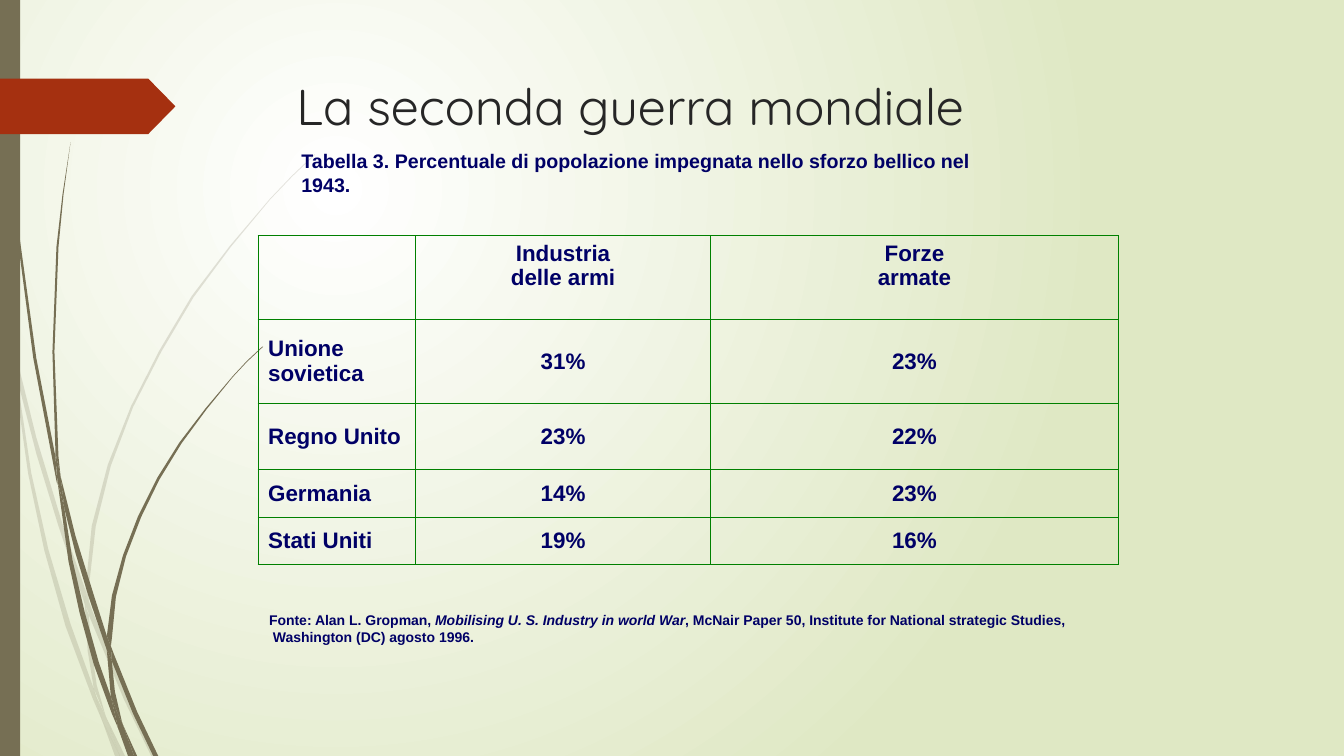
from lxml.etree import SubElement
from pptx import Presentation
from pptx.dml.color import RGBColor
from pptx.enum.shapes import MSO_SHAPE
from pptx.enum.text import MSO_ANCHOR, MSO_AUTO_SIZE, PP_ALIGN
from pptx.oxml import parse_xml
from pptx.oxml.ns import nsdecls, qn
from pptx.util import Inches, Pt

WIDTH, HEIGHT = Inches(13.33), Inches(7.5)
COLUMNS, ROWS = 13.33, 7.5
OLIVE, RUST, NAVY, GREEN, INK = "766F54", "A53010", "000066", "008000", "262626"

PALE_STALKS = [
    [(0.11, 3.5), (0.09, 3.22), (0, 2.82), (0, 2.99), (0.1, 3.44)],
    [(0.58, 5.22), (0.84, 5.99), (0.85, 5.86), (0.62, 5.2), (0.36, 4.34), (0.14, 3.45),
     (0.17, 3.76), (0.36, 4.5)],
    [(0.92, 6.07), (0.88, 5.96), (0.88, 6.1), (1.23, 6.94), (1.5, 7.5), (1.55, 7.5), (1.27, 6.92)],
    [(1.19, 7.5), (1.24, 7.5), (1.05, 7.11)],
    [(0.93, 6.83), (0.7, 6.19), (0.48, 5.45), (0.31, 4.69), (0.17, 3.76), (0.11, 3.5), (0.28, 4.7),
     (0.44, 5.46), (0.65, 6.21), (0.92, 6.93), (1.01, 7.14), (0.99, 7.07)],
    [(0.84, 5.99), (0.87, 6.46), (0.93, 6.83), (1.05, 7.11), (0.96, 6.8), (0.91, 6.46), (0.88, 6.1)],
    [(0.88, 5.84), (0.95, 5.22), (1.1, 4.62), (1.32, 4.04), (1.6, 3.49), (1.92, 2.95), (2.29, 2.45),
     (2.68, 1.98), (2.9, 1.75), (3.12, 1.54), (3.12, 1.53), (2.89, 1.75), (2.68, 1.97),
     (2.28, 2.44), (1.9, 2.94), (1.58, 3.48), (1.3, 4.03), (1.07, 4.61), (0.91, 5.22),
     (0.85, 5.84), (0.88, 5.96)],
    [(1.01, 7.14), (1.14, 7.5), (1.19, 7.5)],
    [(0.88, 6.08), (0.88, 5.96), (0.85, 5.86), (0.84, 5.99)],
    [(0.96, 6.92), (0.93, 6.83), (0.99, 7.07), (1.01, 7.14), (1.19, 7.5), (1.05, 7.11)],
]
DARK_STALKS = [
    [(0.07, 1.1), (0.17, 2.33), (0.33, 3.55), (0.56, 4.77), (0.57, 4.81), (0.55, 4.53),
     (0.36, 3.55), (0.19, 2.32), (0.08, 1.09), (0.05, 0.48), (0.04, 0), (0.03, 0), (0.04, 0.48)],
    [(0.88, 5.92), (1.06, 6.45), (1.06, 6.31), (0.93, 5.9), (0.75, 5.32), (0.6, 4.72),
     (0.64, 5.05), (0.75, 5.49)],
    [(1.13, 6.49), (1.1, 6.41), (1.11, 6.56), (1.32, 7.08), (1.52, 7.5), (1.57, 7.5), (1.36, 7.06)],
    [(1.1, 6.91), (0.98, 6.57), (0.84, 6.07), (0.72, 5.56), (0.64, 5.05), (0.57, 4.77),
     (0.68, 5.57), (0.79, 6.08), (0.93, 6.59), (1.11, 7.08), (1.17, 7.22), (1.16, 7.17)],
    [(0.6, 4.72), (0.58, 4.53), (0.54, 3.49), (0.58, 2.45), (0.63, 1.93), (0.7, 1.41),
     (0.62, 1.93), (0.56, 2.45), (0.52, 3.49), (0.55, 4.49)],
    [(1.33, 7.5), (1.36, 7.5), (1.22, 7.19)],
    [(0.57, 4.77), (0.64, 5.05), (0.6, 4.72), (0.55, 4.49), (0.55, 4.53)],
    [(1.11, 6.33), (1.15, 5.92), (1.25, 5.52), (1.4, 5.13), (1.58, 4.76), (1.8, 4.4), (2.05, 4.06),
     (2.31, 3.74), (2.45, 3.59), (2.61, 3.44), (2.6, 3.44), (2.45, 3.58), (2.31, 3.73),
     (2.04, 4.05), (1.78, 4.39), (1.56, 4.74), (1.37, 5.12), (1.22, 5.51), (1.11, 5.91),
     (1.06, 6.31), (1.1, 6.41)],
    [(1.17, 7.22), (1.27, 7.5), (1.31, 7.5)],
    [(1.06, 6.45), (1.1, 6.91), (1.16, 7.06), (1.22, 7.19), (1.21, 7.16), (1.14, 6.86),
     (1.11, 6.56), (1.09, 6.51)],
    [(1.06, 6.45), (1.09, 6.51), (1.11, 6.56), (1.1, 6.41), (1.06, 6.31)],
    [(1.16, 7.06), (1.1, 6.91), (1.16, 7.17), (1.17, 7.22), (1.3, 7.5), (1.33, 7.5), (1.22, 7.19)],
]
POPULATION = [
    ["", "Industria\vdelle armi", "Forze\varmate"],
    ["Unione sovietica", "31%", "23%"],
    ["Regno Unito", "23%", "22%"],
    ["Germania", "14%", "23%"],
    ["Stati Uniti", "19%", "16%"],
]
SOURCE = [
    [("Fonte: Alan L. Gropman, ", False), ("Mobilising U. S. Industry in world War", True),
     (", McNair Paper 50, Institute for National strategic Studies,", False)],
    [(" Washington (DC) agosto 1996.", False)],
]


def across(columns):
    """Turn grid columns into a length."""
    return round(WIDTH * columns / COLUMNS)


def down(rows):
    """Turn grid rows into a length."""
    return round(HEIGHT * rows / ROWS)


def place(left, top, width, height):
    """Turn a grid area into lengths."""
    return across(left), down(top), across(width), down(height)


def color(code):
    """Turn a hex string into a colour."""
    return RGBColor.from_string(code)


def apply(target, formats):
    """Set every attribute in a dict of format values."""
    for attribute, value in formats.items():
        setattr(target, attribute, value)


def style_font(font, size, code, **formats):
    """Give a font its size, colour and further formats."""
    apply(font, {"size": Pt(size), "name": "Arial", **formats})
    font.color.rgb = color(code)


def paint(shape, code, opacity=100):
    """Give a shape a plain fill without line or shadow."""
    shape.shadow.inherit = False
    shape.fill.solid()
    shape.fill.fore_color.rgb = color(code)
    shape.line.fill.background()
    if opacity < 100:
        tint = next(shape.element.spPr.iter(qn("a:srgbClr")))
        SubElement(tint, qn("a:alpha"), val=str(opacity * 1000))


def add_stalk(slide, corners, opacity):
    """Draw one piece of a grass stalk."""
    outline = [(across(x), down(y)) for x, y in corners]
    builder = slide.shapes.build_freeform(*outline[0])
    builder.add_line_segments(outline[1:], close=True)
    paint(builder.convert_to_shape(), OLIVE, opacity)


def add_block(slide, kind, area, code):
    """Draw a preset shape in one colour."""
    block = slide.shapes.add_shape(kind, *place(*area))
    paint(block, code)
    return block


def set_background(slide):
    """Spread a round gradient from the upper left."""
    fill = slide.background.fill
    fill.gradient()
    for stop, code, position in zip(fill.gradient_stops, ("FFFFFF", "DFE8C4"), (0, 1)):
        stop.color.rgb = color(code)
        stop.position = position
    direction = next(slide.element.iter(qn("a:lin")))
    glow = parse_xml(f'<a:path {nsdecls("a")} path="circle">'
                     '<a:fillToRect l="50000" t="50000" r="100000" b="100000"/></a:path>')
    direction.getparent().replace(direction, glow)


def set_title(slide, text, area):
    """Move and format the title placeholder."""
    title = slide.shapes.title
    apply(title, dict(zip(("left", "top", "width", "height"), place(*area))))
    frame = title.text_frame
    frame.text = text
    apply(frame, {"vertical_anchor": MSO_ANCHOR.TOP, "word_wrap": True,
                  "auto_size": MSO_AUTO_SIZE.NONE})
    frame.paragraphs[0].alignment = PP_ALIGN.LEFT
    style_font(frame.paragraphs[0].runs[0].font, 36, INK, name="Quicksand")


def add_note(slide, area, lines, size, **formats):
    """Write bold lines made of plain and italic parts."""
    frame = slide.shapes.add_textbox(*place(*area)).text_frame
    apply(frame, {"word_wrap": True, "vertical_anchor": MSO_ANCHOR.MIDDLE,
                  "auto_size": MSO_AUTO_SIZE.NONE, **formats})
    for number, parts in enumerate(lines):
        line = frame.add_paragraph() if number else frame.paragraphs[0]
        for text, italic in parts:
            run = line.add_run()
            run.text = text
            style_font(run.font, size, NAVY, bold=True, italic=italic)


def outline_cell(cell):
    """Clear a cell's fill and draw its four borders."""
    cell.fill.background()
    for index, side in enumerate("LRTB"):
        border = parse_xml(f'<a:ln{side} {nsdecls("a")} w="{Pt(0.75)}"><a:solidFill>'
                           f'<a:srgbClr val="{GREEN}"/></a:solidFill></a:ln{side}>')
        cell._tc.get_or_add_tcPr().insert(index, border)


def add_population_table(slide, left, top, widths, heights):
    """Build the table of population shares."""
    area = place(left, top, sum(widths), sum(heights))
    table = slide.shapes.add_table(len(heights), len(widths), *area).table
    apply(table, {"first_row": False, "horz_banding": False})
    for column, width in zip(table.columns, widths):
        column.width = across(width)
    for row, height in zip(table.rows, heights):
        row.height = down(height)
    for r, entries in enumerate(POPULATION):
        for c, entry in enumerate(entries):
            cell = table.cell(r, c)
            cell.text = entry
            cell.vertical_anchor = MSO_ANCHOR.MIDDLE if r else MSO_ANCHOR.TOP
            line = cell.text_frame.paragraphs[0]
            line.alignment = PP_ALIGN.CENTER if c else PP_ALIGN.LEFT
            for run in line.runs:
                style_font(run.font, 16, NAVY, bold=True)
            outline_cell(cell)


def main():
    """Build the slide and save it."""
    deck = Presentation()
    apply(deck, {"slide_width": WIDTH, "slide_height": HEIGHT})
    slide = deck.slides.add_slide(deck.slide_layouts[5])
    set_background(slide)
    for stalks, opacity in ((PALE_STALKS, 20), (DARK_STALKS, 100)):
        for corners in stalks:
            add_stalk(slide, corners, opacity)
    add_block(slide, MSO_SHAPE.RECTANGLE, (0, 0, 0.2, ROWS), OLIVE)
    tag = add_block(slide, MSO_SHAPE.PENTAGON, (0, 0.78, 1.74, 0.55), RUST)
    tag.adjustments[0] = 0.49
    set_title(slide, "La seconda guerra mondiale", (2.84, 0.69, 9.75, 1.4))
    caption = "Tabella 3. Percentuale di popolazione impegnata nello sforzo bellico nel 1943."
    add_note(slide, (2.89, 1.55, 7.35, 0.33), [[(caption, False)]], 14)
    add_population_table(slide, 2.56, 2.34, (1.56, 2.93, 4.04), (0.83, 0.83, 0.66, 0.47, 0.47))
    add_note(slide, (2.57, 6.02, 8.11, 0.43), SOURCE, 10, margin_right=0)
    deck.save("out.pptx")


if __name__ == "__main__":
    main()
